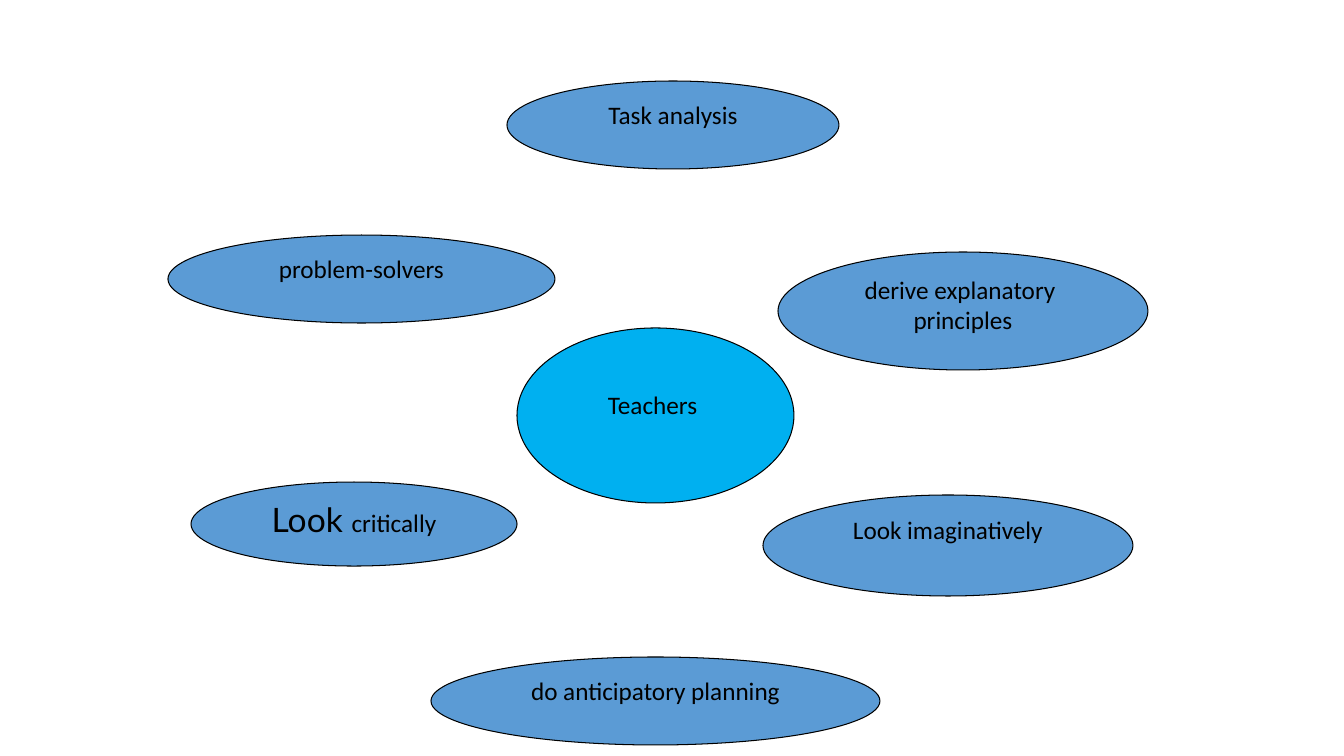
import pptx
import pptx.dml.color
import pptx.enum.shapes
import pptx.enum.text
import pptx.util

PX = 914400 / 100.8
BLACK = pptx.dml.color.RGBColor(0x00, 0x00, 0x00)
SKILL_BLUE = pptx.dml.color.RGBColor(0x5B, 0x9B, 0xD5)
CENTRE_BLUE = pptx.dml.color.RGBColor(0x00, 0xB0, 0xF0)

SKILLS = [
    ((431, 657, 449, 88), ["do anticipatory planning"]),
    ((778, 252, 370, 118), ["derive explanatory ", "principles"]),
    ((763, 495, 370, 101), ["Look imaginatively"]),
    ((168, 235, 387, 88), ["problem-solvers"]),
    ((507, 81, 332, 88), ["Task analysis"]),
]


def px(length):
    """Convert whole pixels to EMU."""
    return pptx.util.Emu(round(length * PX))


def add_oval(slide, box, fill, top_inset=5):
    """Add an outlined oval and return its top-anchored text frame."""
    oval = slide.shapes.add_shape(
        pptx.enum.shapes.MSO_SHAPE.OVAL, *(px(length) for length in box)
    )
    oval.shadow.inherit = False
    oval.fill.solid()
    oval.fill.fore_color.rgb = fill
    oval.line.color.rgb = BLACK
    oval.line.width = pptx.util.Pt(0.75)
    label = oval.text_frame
    label.word_wrap = False
    label.vertical_anchor = pptx.enum.text.MSO_ANCHOR.TOP
    label.margin_top = px(top_inset)
    return label


def add_run(paragraph, text, size=18, font="Calibri"):
    """Add one black run to a centred paragraph."""
    paragraph.alignment = pptx.enum.text.PP_ALIGN.CENTER
    run = paragraph.add_run()
    run.text = text
    run.font.size = pptx.util.Pt(size)
    run.font.name = font
    run.font.color.rgb = BLACK


def add_skill(slide, box, lines):
    """Add a skill oval with one paragraph per line."""
    label = add_oval(slide, box, SKILL_BLUE)
    for index, line in enumerate(lines):
        paragraph = label.add_paragraph() if index else label.paragraphs[0]
        add_run(paragraph, line)


def main():
    """Build the map of teachers' skills."""
    deck = pptx.Presentation()
    deck.slide_width = px(1344)
    deck.slide_height = px(756)
    slide = deck.slides.add_slide(deck.slide_layouts[6])

    for box, lines in SKILLS:
        add_skill(slide, box, lines)

    critically = add_oval(slide, (191, 482, 326, 84), SKILL_BLUE).paragraphs[0]
    add_run(critically, "Look ", 24, "Lato")
    add_run(critically, "critically")

    teachers = add_oval(slide, (517, 328, 277, 175), CENTRE_BLUE, top_inset=36)
    add_run(teachers.paragraphs[0], "Teachers ")

    deck.save("out.pptx")


if __name__ == "__main__":
    main()
